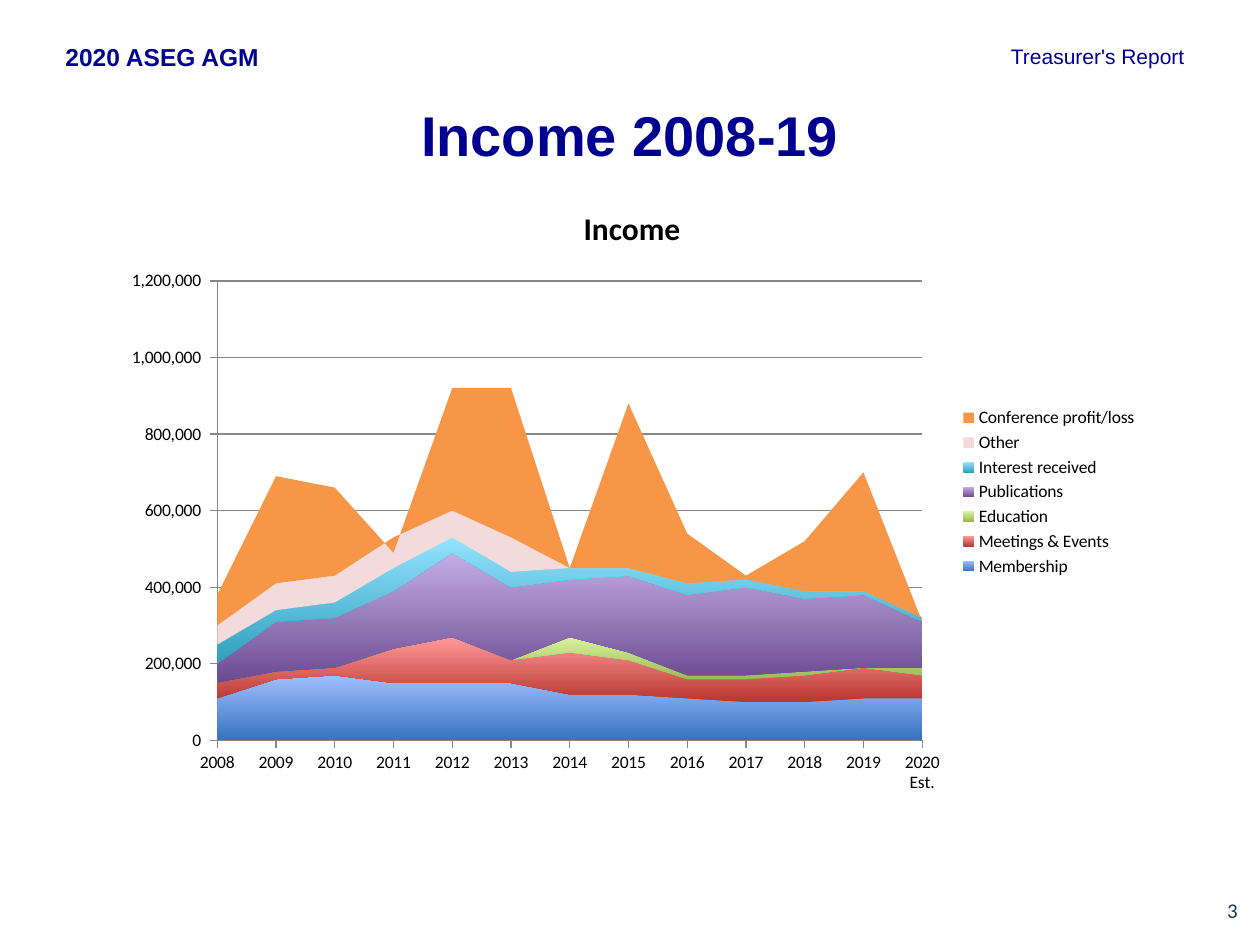
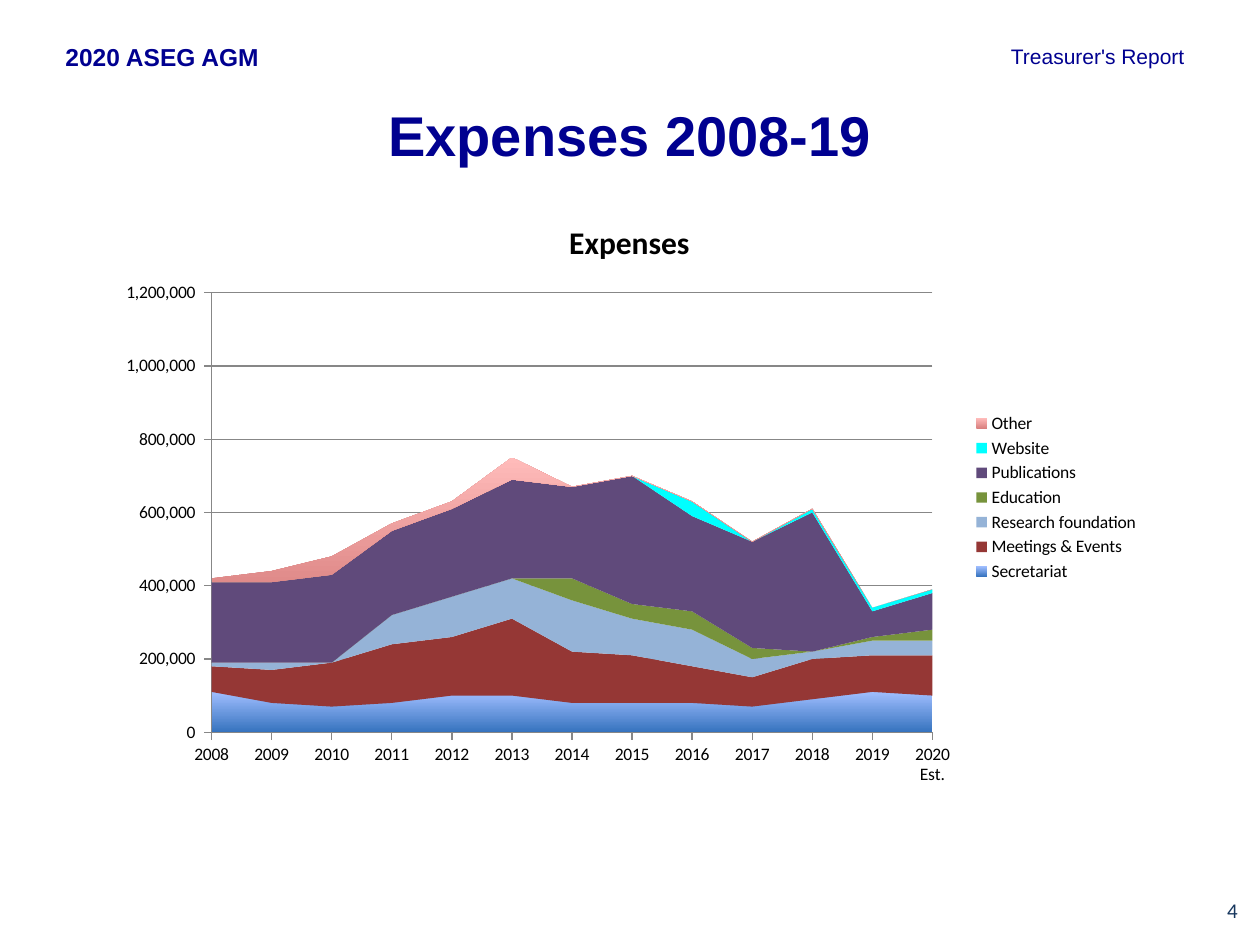
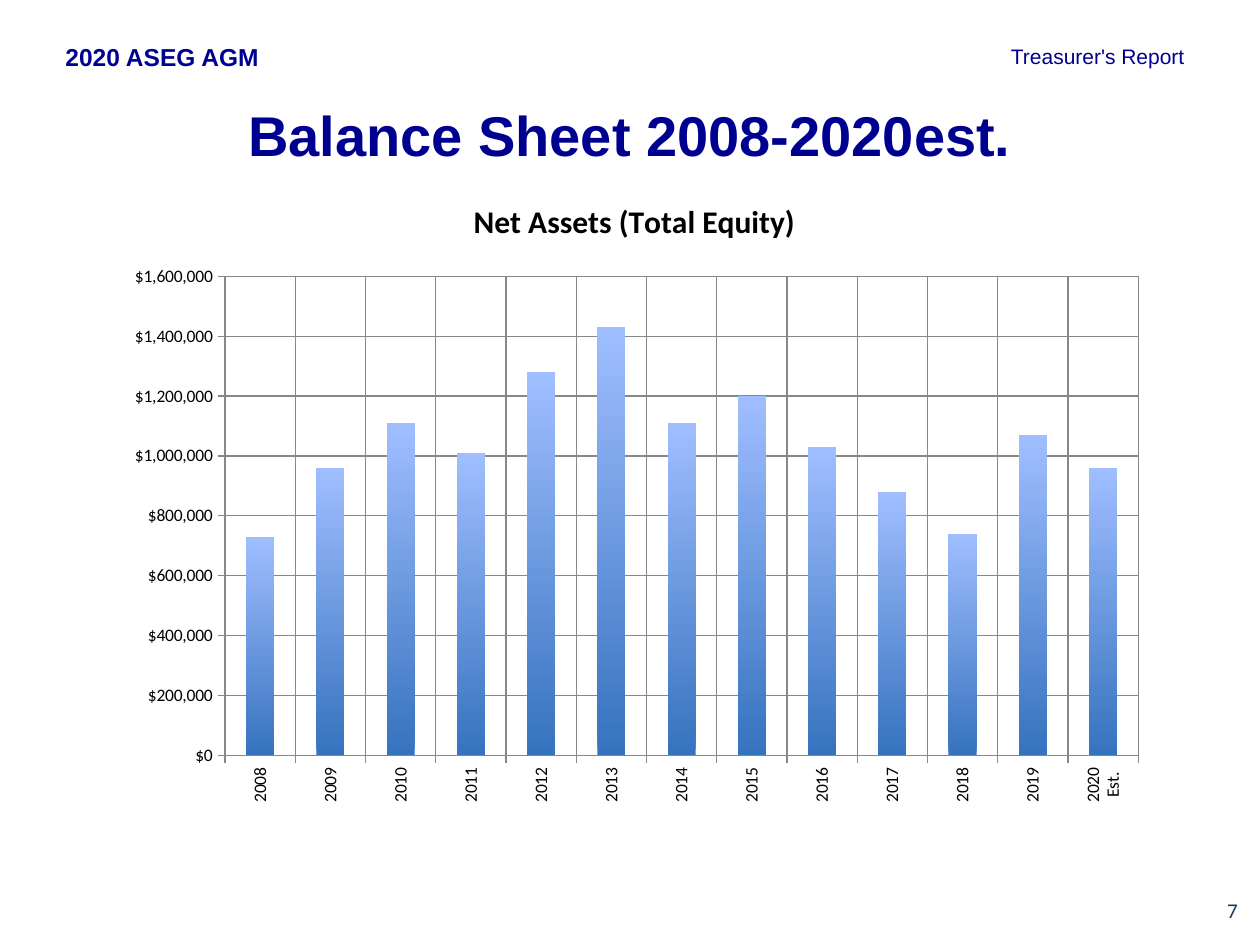
from pptx import Presentation
from pptx.chart.data import CategoryChartData
from pptx.dml.color import RGBColor
from pptx.enum.chart import XL_CHART_TYPE, XL_LEGEND_POSITION, XL_TICK_MARK
from pptx.enum.text import MSO_ANCHOR, PP_ALIGN
from pptx.oxml import parse_xml
from pptx.oxml.ns import nsdecls
from pptx.util import Cm, Pt

AREA = XL_CHART_TYPE.AREA_STACKED
COLUMN = XL_CHART_TYPE.COLUMN_CLUSTERED
LEGEND_RIGHT = XL_LEGEND_POSITION.RIGHT
TICK_OUTSIDE = XL_TICK_MARK.OUTSIDE
LEFT, CENTER, RIGHT = PP_ALIGN.LEFT, PP_ALIGN.CENTER, PP_ALIGN.RIGHT
TOP, MIDDLE = MSO_ANCHOR.TOP, MSO_ANCHOR.MIDDLE

COLORS = {
    "navy": "000090", "number": "17375E", "text": "000000", "grid": "878787",
    "pale pink": "F2DBDA", "orange": "F79646", "dark red": "953735",
    "light blue": "95B3D7", "dark green": "77933C", "dark purple": "604A7B",
    "cyan": "00FFFF",
    # Gradient ends, bottom and top
    "blue low": "3673BE", "blue high": "A0BEFF",
    "red low": "B93530", "red high": "FF9A99",
    "green low": "94B64F", "green high": "D9F29F",
    "purple low": "6A4A90", "purple high": "C4AEE6",
    "aqua low": "2F9FBC", "aqua high": "94E3FF",
    "rose low": "D9807F", "rose high": "FFBBBA",
}
# The last label breaks over two lines so that it fits when turned
YEARS = [str(year) for year in range(2008, 2020)] + ["2020\nEst."]
THOUSANDS = '#,##0_ ;[Red]\\-#,##0\\ '
DOLLARS = '"$"#,##0'

# Series: name, fill, values in thousands
INCOME = [
    ("Membership", "blue", [110, 160, 170, 150, 150, 150, 120, 120, 110, 100, 100, 110, 110]),
    ("Meetings & Events", "red", [40, 20, 20, 90, 120, 60, 110, 90, 50, 60, 70, 80, 60]),
    ("Education", "green", [None] * 6 + [40, 20, 10, 10, 10, 0, 20]),
    ("Publications", "purple", [50, 130, 130, 150, 220, 190, 150, 200, 210, 230, 190, 190, 120]),
    ("Interest received", "aqua", [50, 30, 40, 60, 40, 40, 30, 20, 30, 20, 20, 10, 10]),
    ("Other", "pale pink", [50, 70, 70, 80, 70, 90, None, None, None, 0, 0, 0, None]),
    ("Conference profit/loss", "orange",
     [80, 280, 230, -40, 320, 390, 0, 430, 130, 10, 130, 310, -10]),
]
EXPENSES = [
    ("Secretariat", "blue", [110, 80, 70, 80, 100, 100, 80, 80, 80, 70, 90, 110, 100]),
    ("Meetings & Events", "dark red",
     [70, 90, 120, 160, 160, 210, 140, 130, 100, 80, 110, 100, 110]),
    ("Research foundation", "light blue",
     [10, 20, 0, 80, 110, 110, 140, 100, 100, 50, 20, 40, 40]),
    ("Education", "dark green", [None] * 6 + [60, 40, 50, 30, 0, 10, 30]),
    ("Publications", "dark purple",
     [220, 220, 240, 230, 240, 270, 250, 350, 260, 290, 380, 70, 100]),
    ("Website", "cyan", [None] * 6 + [0, 0, 40, 0, 10, 10, 10]),
    ("Other", "rose", [10, 30, 50, 20, 20, 60] + [None] * 7),
]
NET_ASSETS = [
    ("Net Assets (Total Equity)", "blue",
     [730, 960, 1110, 1010, 1280, 1430, 1110, 1200, 1030, 880, 740, 1070, 960]),
]


def rgb(name):
    return RGBColor.from_string(COLORS[name])


class ReportDeck:
    def __init__(self):
        self.presentation = Presentation()
        self.presentation.slide_width = Cm(25.4)
        self.presentation.slide_height = Cm(19.05)
        self.slide = None

    def add_slide(self, title, number):
        self.slide = self.presentation.slides.add_slide(self.presentation.slide_layouts[6])
        self.add_text(str(number), (23.75, 17.83, 1.45, 1.02), 12, "number", RIGHT,
                      font="Calibri", anchor=MIDDLE)
        self.add_text(title, (1.27, 1.9, 22.86, 2.03), 32, "navy", CENTER, bold=True)
        self.add_text("Treasurer's Report", (12.7, 0.76, 11.43, 0.76), 12, "navy", RIGHT)
        self.add_text("2020 ASEG AGM", (1.07, 0.72, 11.63, 0.86), 14, "navy", LEFT, bold=True)

    def add_text(self, text, box, size, color, align, font="Arial", bold=False, anchor=TOP):
        frame = self.slide.shapes.add_textbox(*map(Cm, box)).text_frame
        frame.word_wrap = True
        frame.vertical_anchor = anchor
        paragraph = frame.paragraphs[0]
        paragraph.alignment = align
        self.add_run(paragraph, text, size, color, font, bold)

    def add_run(self, paragraph, text, size, color, font, bold):
        run = paragraph.add_run()
        run.text = text
        run.font.name = font
        run.font.size = Pt(size)
        run.font.bold = bold
        run.font.color.rgb = rgb(color)

    def add_chart(self, kind, title, rows, box, plot_box, top_value, number_format):
        data = CategoryChartData()
        data.categories = YEARS
        for name, _, values in rows:
            data.add_series(name, [None if v is None else v * 1000 for v in values])
        chart = self.slide.shapes.add_chart(kind, *map(Cm, box), data).chart
        chart.font.name = "Calibri"
        chart.font.size = Pt(10)
        chart.font.color.rgb = rgb("text")

        # Title and legend
        chart.has_title = True
        self.add_run(chart.chart_title.text_frame.paragraphs[0], title, 18, "text",
                     "Calibri", True)
        chart.has_legend = len(rows) > 1
        if chart.has_legend:
            chart.legend.position = LEGEND_RIGHT
            chart.legend.include_in_layout = False

        # Axes
        value_axis = chart.value_axis
        self.style_axis(chart.category_axis, kind == COLUMN)
        self.style_axis(value_axis, True)
        value_axis.minimum_scale = 0
        value_axis.maximum_scale = top_value
        value_axis.major_unit = 200000
        value_axis.tick_labels.number_format = number_format
        value_axis.tick_labels.number_format_is_linked = False

        # Series fills
        plot = chart.plots[0]
        plot.vary_by_categories = False
        for series, (_, color, _) in zip(plot.series, rows):
            self.fill_series(series.format.fill, color)
        if kind == COLUMN:
            plot.gap_width = 150
            chart.category_axis.tick_labels.font.size = Pt(10)
            chart.element.xpath(".//c:catAx/c:txPr/a:bodyPr")[0].set("rot", "-5400000")

        self.place_plot(chart, plot_box)
        for blanks in chart.element.xpath(".//c:dispBlanksAs"):
            blanks.set("val", "zero")

    def style_axis(self, axis, has_gridlines):
        axis.major_tick_mark = TICK_OUTSIDE
        axis.has_major_gridlines = has_gridlines
        lines = [axis.format.line]
        if has_gridlines:
            lines.append(axis.major_gridlines.format.line)
        for line in lines:
            line.color.rgb = rgb("grid")
            line.width = Pt(0.75)

    def fill_series(self, fill, color):
        if color in COLORS:
            fill.solid()
            fill.fore_color.rgb = rgb(color)
            return
        fill.gradient()
        fill.gradient_angle = 90
        for stop, end in zip(fill.gradient_stops, ("low", "high")):
            stop.color.rgb = rgb(f"{color} {end}")

    def place_plot(self, chart, plot_box):
        plot_area = chart.element.xpath(".//c:plotArea")[0]
        for layout in plot_area.xpath("./c:layout"):
            plot_area.remove(layout)
        parts = "".join(f'<c:{key} val="{value}"/>' for key, value in zip("xywh", plot_box))
        plot_area.insert(0, parse_xml(
            f'<c:layout {nsdecls("c")}><c:manualLayout><c:layoutTarget val="inner"/>'
            f'<c:xMode val="edge"/><c:yMode val="edge"/>{parts}</c:manualLayout></c:layout>'))


def main():
    deck = ReportDeck()

    deck.add_slide("Income 2008-19", 3)
    deck.add_chart(AREA, "Income", INCOME, (2.29, 3.66, 20.9, 12.52),
                   (0.1, 0.16, 0.68, 0.74), 1200000, THOUSANDS)

    deck.add_slide("Expenses 2008-19", 4)
    deck.add_chart(AREA, "Expenses", EXPENSES, (2.16, 3.96, 21.06, 12.14),
                   (0.1, 0.16, 0.69, 0.73), 1200000, THOUSANDS)

    deck.add_slide("Balance Sheet 2008-2020est.", 7)
    deck.add_chart(COLUMN, "Net Assets (Total Equity)", NET_ASSETS,
                   (2.21, 3.51, 21.16, 12.88), (0.11, 0.16, 0.87, 0.75), 1600000, DOLLARS)

    deck.presentation.save("out.pptx")


if __name__ == "__main__":
    main()
